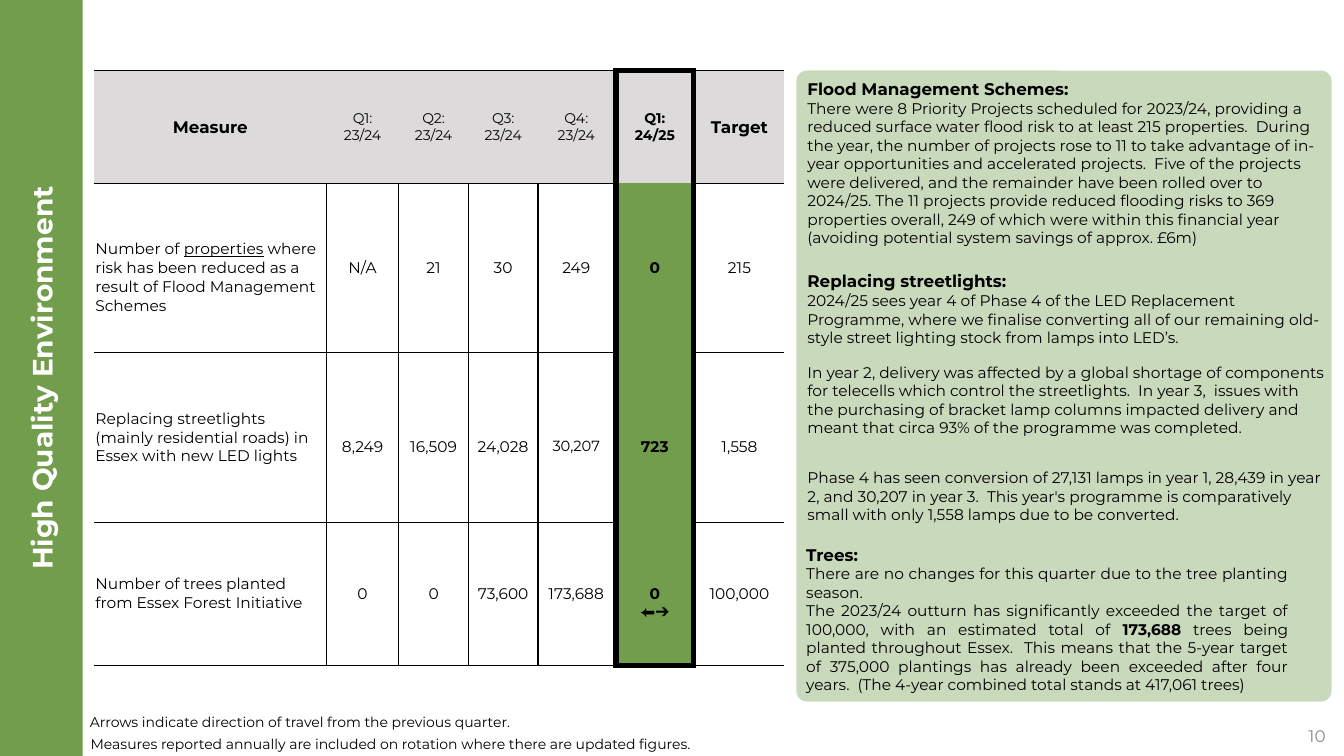
from lxml.etree import SubElement as Sub
from pptx import Presentation
from pptx.dml.color import RGBColor as Rgb
from pptx.enum.shapes import MSO_SHAPE as Kind
from pptx.enum.text import MSO_ANCHOR as Anchor, PP_ALIGN as Align
from pptx.oxml.ns import qn
from pptx.util import Pt

FONT = "Montserrat"
HUE = {"green": "729D4D", "grey": "DCDADA", "black": "000000",
       "white": "FFFFFF", "page": "8C8C8C"}
BOLD = {"bold": True}
HEAD = {"bold": True, "size": Pt(12)}
GAP = {"space_before": Pt(11.3), "space_after": Pt(11.3)}
MID = {"alignment": Align.CENTER}
JUST = {"alignment": Align.JUSTIFY}

COLS = [165.6, 51.8, 49.7, 49.7, 54.7, 57.6, 63.4]
ROWS = [80.6, 121, 121, 102.2]
NOW = 5   # column of the current quarter
DROP = 14   # extra top inset that lowers a cell's text

TOPS = [[[("Measure", HEAD)]], ["Q1:", "23/24"], ["Q2:", "23/24"],
        ["Q3:", "23/24"], ["Q4:", "23/24"],
        [[("Q1:", BOLD)], [("24/25", BOLD)]], [[("Target", HEAD)]]]
BODY = [
    [[["Number of ", ("properties", {"underline": True}),
       " where risk has been reduced as a result of Flood Management Schemes"]],
     ["N/A"], ["21"], ["30"], ["249"], [[("0", BOLD)]], ["215"]],
    [["Replacing streetlights (mainly residential roads) in Essex with new LED lights"],
     ["8,249"], ["16,509"], ["24,028"], [[("30,207", {"size": Pt(10.5)})]],
     [[("723", BOLD)]], ["1,558"]],
    [["Number of trees planted from Essex Forest Initiative"],
     ["0"], ["0"], ["73,600"], ["173,688"],
     [[("0", BOLD)], [("⬅➔", {"bold": True, "name": "Arial"})]], ["100,000"]],
]
LOW = {(1, 0), (3, NOW)} | {(2, col) for col in range(1, len(COLS))}

FLOOD = [
    [("Flood Management Schemes:", HEAD)],
    "There were 8 Priority Projects scheduled for 2023/24, providing a reduced "
    "surface water flood risk to at least 215 properties.  During the year, the "
    "number of projects rose to 11 to take advantage of in-year opportunities and "
    "accelerated projects.  Five of the projects were delivered, and the remainder "
    "have been rolled over to 2024/25. The 11 projects provide reduced flooding "
    "risks to 369 properties overall, 249 of which were within this financial year "
    "(avoiding potential system savings of approx. £6m)",
]
LIGHTS = [
    [("Replacing streetlights:", HEAD)],
    "2024/25 sees year 4 of Phase 4 of the LED Replacement Programme, where we "
    "finalise converting all of our remaining old-style street lighting stock from "
    "lamps into LED’s.",
    "In year 2, delivery was affected by a global shortage of components for "
    "telecells which control the streetlights.  In year 3,  issues with the "
    "purchasing of bracket lamp columns impacted delivery and meant that circa 93% "
    "of the programme was completed.",
    "Phase 4 has seen conversion of 27,131 lamps in year 1, 28,439 in year 2, and "
    "30,207 in year 3.  This year's programme is comparatively small with only "
    "1,558 lamps due to be converted.",
]
TREES = [
    [("Trees:", HEAD)],
    "There are no changes for this quarter due to the tree planting season.",
    ["The 2023/24 outturn has significantly exceeded the target of 100,000, with an "
     "estimated total of ", ("173,688", BOLD),
     " trees being planted throughout Essex.  This means that the 5-year target of "
     "375,000 plantings has already been exceeded after four years.  (The 4-year "
     "combined total stands at 417,061 trees)"],
]


def rgb(hue):
    return Rgb.from_string(HUE[hue])


def put(thing, vals):
    """Set each named attribute of thing."""
    for key, val in vals.items():
        setattr(thing, key, val)


def inset(thing, side, top):
    put(thing, {"margin_left": Pt(side), "margin_right": Pt(side),
                "margin_top": Pt(top), "margin_bottom": Pt(side and 0.7)})


def write(frame, paras, size=11, hue="black", form=None):
    """Fill frame; a paragraph is a string or a list of strings and (text, format)."""
    for num, para in enumerate(paras):
        line = frame.add_paragraph() if num else frame.paragraphs[0]
        put(line, form or {})
        for part in [para] if isinstance(para, str) else para:
            text, look = (part, {}) if isinstance(part, str) else part
            run = line.add_run()
            run.text = text
            put(run.font, {"name": FONT, "size": Pt(size), "bold": False, **look})
            run.font.color.rgb = rgb(hue)


def add_text(slide, box, paras, pad=(0, 0), **look):
    frame = slide.shapes.add_textbox(*map(Pt, box)).text_frame
    frame.word_wrap = True
    inset(frame, *pad)
    write(frame, paras, **look)
    return frame


def edge(cell, sides, width):
    """Draw the given sides of a cell and clear the others."""
    props = cell._tc.get_or_add_tcPr()
    for side in "LRTB":
        line = Sub(props, qn("a:ln" + side), w=str(Pt(width)))
        if side in sides:
            fill = Sub(line, qn("a:solidFill"))
            Sub(fill, qn("a:srgbClr"), val=HUE["black"])
        else:
            Sub(line, qn("a:noFill"))


def add_grid(slide, left, top, cols, rows):
    size = map(Pt, (left, top, sum(cols), sum(rows)))
    grid = slide.shapes.add_table(len(rows), len(cols), *size).table
    put(grid, {"first_row": False, "horz_banding": False})
    for col, width in zip(grid.columns, cols):
        col.width = Pt(width)
    for row, tall in zip(grid.rows, rows):
        row.height = Pt(tall)
    return grid


def paint(cell, hue):
    if hue:
        cell.fill.solid()
        cell.fill.fore_color.rgb = rgb(hue)
    else:
        cell.fill.background()


def sides(row, col):
    """Name the ruled sides of a measure cell."""
    if col == NOW:
        return "T" if row == 0 else "B" if row == len(ROWS) - 1 else ""
    lines = "TB"
    if row and col < NOW - 1:
        lines += "R"
    if row and 0 < col < NOW:
        lines += "L"
    return lines


def add_scores(slide):
    grid = add_grid(slide, 67.5, 50.4, COLS, ROWS)
    for row, line in enumerate([TOPS] + BODY):
        for col, paras in enumerate(line):
            cell = grid.cell(row, col)
            cell.vertical_anchor = Anchor.MIDDLE
            inset(cell, 0.7, DROP if (row, col) in LOW else 0.7)
            edge(cell, sides(row, col), 1)
            paint(cell, "green" if row and col == NOW else None if row else "grey")
            write(cell.text_frame, paras, size=11 if row else 10,
                  form=MID if col or not row else None)


def add_frame(slide):
    """Outline the current quarter."""
    cell = add_grid(slide, 440, 50.4, [55.4], [sum(ROWS)]).cell(0, 0)
    edge(cell, "LRTB", 4.5)
    paint(cell, None)


def add_band(slide):
    band = slide.shapes.title
    put(band, {"left": Pt(-240.5), "top": Pt(240.5), "width": Pt(540),
               "height": Pt(59), "rotation": 270})
    band.fill.solid()
    band.fill.fore_color.rgb = rgb("green")
    band.text_frame.vertical_anchor = Anchor.MIDDLE
    inset(band.text_frame, 0, 0)
    write(band.text_frame, [[("High Quality Environment", BOLD)]],
          size=20, hue="white", form=MID)


def add_panel(slide):
    box = map(Pt, (568.8, 50.4, 382.3, 450.7))
    panel = slide.shapes.add_shape(Kind.ROUNDED_RECTANGLE, *box)
    panel.adjustments[0] = 0.02
    panel.shadow.inherit = False
    panel.line.fill.background()
    panel.fill.solid()
    panel.fill.fore_color.rgb = rgb("green")
    tint = panel._element.spPr.find(".//" + qn("a:srgbClr"))
    Sub(tint, qn("a:alpha"), val="38000")


def main():
    deck = Presentation()
    put(deck, {"slide_width": Pt(960), "slide_height": Pt(540)})
    slide = deck.slides.add_slide(deck.slide_layouts[5])
    add_band(slide)
    add_scores(slide)
    add_frame(slide)
    add_panel(slide)
    add_text(slide, (576.7, 56.2, 365.8, 128), FLOOD)
    lights = add_text(slide, (576.7, 193.7, 370, 223), LIGHTS)
    for para in lights.paragraphs[2:]:
        put(para, GAP)
    add_text(slide, (568.8, 385.2, 358.6, 137), TREES, pad=(7.2, 3.6), form=JUST)
    add_text(slide, (64.2, 509.8, 431, 24.5),
             ["Arrows indicate direction of travel from the previous quarter."], size=10)
    add_text(slide, (64.8, 525.6, 438, 24.5),
             ["Measures reported annually are included on rotation where there are "
              "updated figures."], size=10)
    page = add_text(slide, (738, 511.2, 216, 28.8), ["10"], pad=(7.2, 0.7), size=12,
                    hue="page", form={"alignment": Align.RIGHT})
    page.vertical_anchor = Anchor.MIDDLE
    deck.save("out.pptx")


if __name__ == "__main__":
    main()
